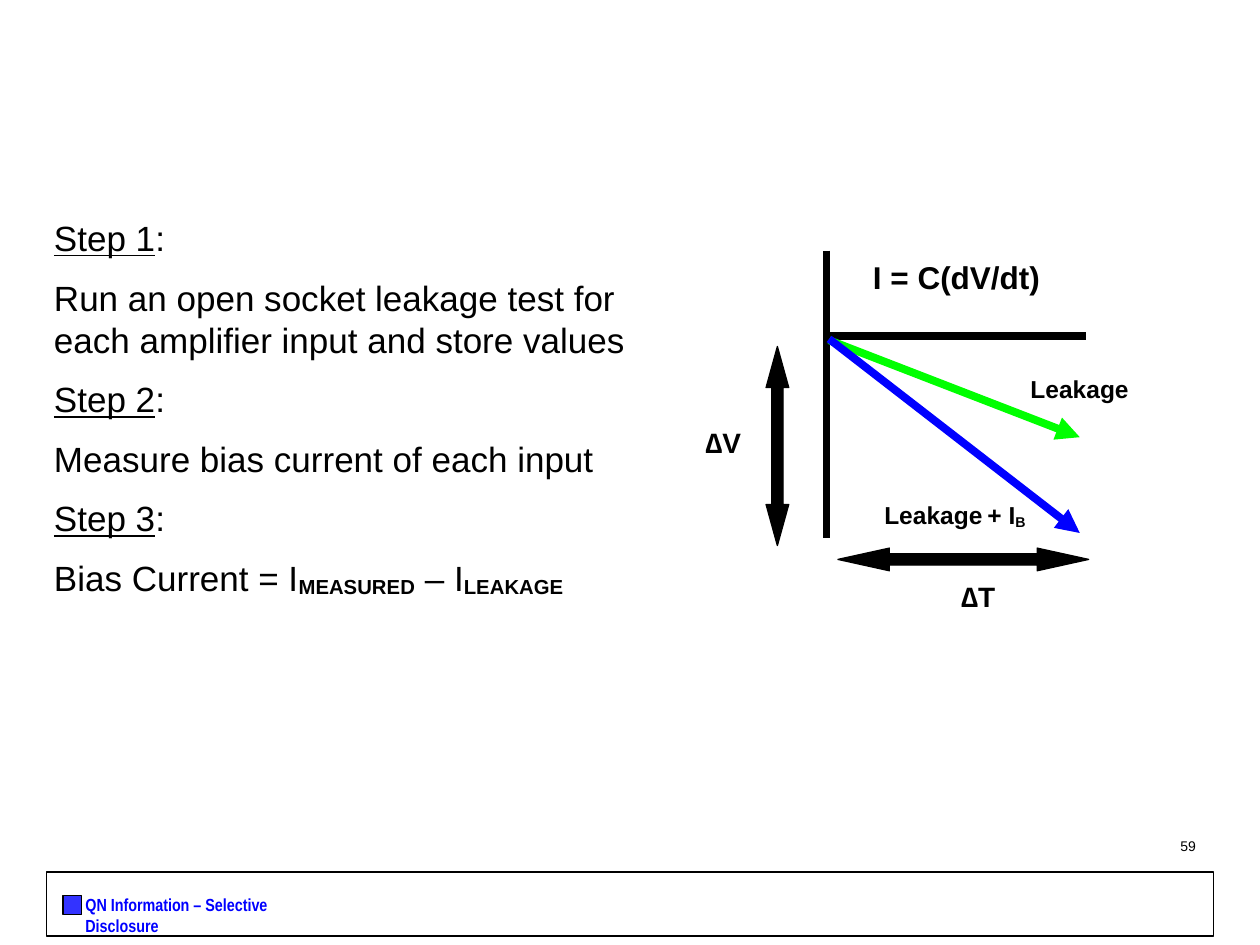
"""Build the bias current measurement slide."""
from pptx import Presentation
from pptx.dml.color import RGBColor
from pptx.enum.shapes import MSO_CONNECTOR as CONN, MSO_SHAPE as SHAPE
from pptx.enum.text import PP_ALIGN as ALIGN
from pptx.oxml.ns import qn
from pptx.util import Inches, Pt
from lxml.etree import SubElement

BLACK = RGBColor(0, 0, 0)
GREEN = RGBColor(0, 255, 0)
BLUE = RGBColor(0, 0, 255)
SQUARE_BLUE = RGBColor(0x33, 0x33, 0xFF)

UNDER = {"underline": True}
SUB = {"bold": True, "sub": True}
SMALL = {"size": 10}

STEPS = [
    [("Step 1", UNDER), ":"],
    ["Run an open socket leakage test for each amplifier input and store values"],
    [("Step 2", UNDER), ":"],
    ["Measure bias current of each input"],
    [("Step 3", UNDER), ":"],
    ["Bias Current = I", ("MEASURED", SUB), " – I", ("LEAKAGE", SUB)],
]
LABELS = [
    ((6.83, 2, 1.61, 0.85), 18, ["I = C(dV/dt)"]),
    ((5.5, 3.33, 0.49, 0.37), 16, ["∆V"]),
    ((7.53, 4.55, 0.49, 0.37), 16, ["∆T"]),
    ((8.08, 2.92, 0.98, 0.33), 14, ["Leakage"]),
    ((6.92, 3.92, 1.67, 0.33), 14,
     ["Leakage", (" ", SMALL), "+ I", ("B", SUB)]),
]
LINES = [
    ((6.56, 1.99, 6.56, 4.27), BLACK, False),
    ((6.56, 2.67, 8.62, 2.67), BLACK, False),
    ((6.58, 2.7, 8.57, 3.47), GREEN, True),
    ((6.58, 2.69, 8.57, 4.23), BLUE, True),
]
SHAPES = [
    (SHAPE.RECTANGLE, (0.37, 6.92, 9.26, 0.51), None, ()),
    (SHAPE.RECTANGLE, (0.5, 7.11, 0.15, 0.15), SQUARE_BLUE, ()),
    (SHAPE.UP_DOWN_ARROW, (6.08, 2.75, 0.18, 1.58), BLACK, (0.5, 1.81)),
    (SHAPE.LEFT_RIGHT_ARROW, (6.65, 4.35, 1.99, 0.18), BLACK, (0.5, 2.27)),
]


def add_text(slide, box, paragraphs, size=20, bold=False, color=BLACK,
             font="Arial", align=ALIGN.LEFT, space=10):
    tf = slide.shapes.add_textbox(*map(Inches, box)).text_frame
    tf.word_wrap = True
    for i, runs in enumerate(paragraphs):
        p = tf.paragraphs[0] if i == 0 else tf.add_paragraph()
        p.alignment = align
        if i:
            p.space_before = Pt(space)
        for item in runs:
            text, style = (item, {}) if isinstance(item, str) else item
            r = p.add_run()
            r.text = text
            r.font.name = font
            r.font.size = Pt(style.get("size", size))
            r.font.bold = style.get("bold", bold)
            r.font.underline = style.get("underline", False)
            r.font.color.rgb = color
            if style.get("sub"):
                r.font._element.set("baseline", "-10000")


def add_line(slide, ends, color, arrow):
    line = slide.shapes.add_connector(CONN.STRAIGHT, *map(Inches, ends))
    line.line.width = Pt(4.5)
    line.line.color.rgb = color
    if arrow:
        SubElement(line.line._get_or_add_ln(), qn("a:tailEnd"), type="triangle")
    SubElement(line._element.spPr, qn("a:effectLst"))


def set_adjustments(sp, values):
    guides = sp._element.spPr.find(qn("a:prstGeom")).get_or_add_avLst()
    for guide in list(guides):
        guides.remove(guide)
    for n, value in enumerate(values, 1):
        SubElement(guides, qn("a:gd"), name=f"adj{n}",
                   fmla=f"val {round(value * 100000)}")


def add_shape(slide, kind, box, fill, adjustments):
    sp = slide.shapes.add_shape(kind, *map(Inches, box))
    sp.shadow.inherit = False
    set_adjustments(sp, adjustments)
    if fill is None:
        sp.fill.background()
    else:
        sp.fill.solid()
        sp.fill.fore_color.rgb = fill
    sp.line.color.rgb = BLACK
    sp.line.width = Pt(0.75)


def main():
    prs = Presentation()
    prs.slide_width, prs.slide_height = Inches(10), Inches(7.5)
    slide = prs.slides.add_slide(prs.slide_layouts[6])
    for shape in SHAPES:
        add_shape(slide, *shape)
    for line in LINES:
        add_line(slide, *line)
    for box, size, runs in LABELS:
        add_text(slide, box, [runs], size=size, bold=True)
    add_text(slide, (0.33, 1.67, 5.08, 3.27), STEPS)
    add_text(slide, (0.58, 7.05, 1.7, 0.27),
             [["QN Information – Selective Disclosure"]],
             size=10, bold=True, color=BLUE, font="Arial Narrow")
    add_text(slide, (7.26, 6.6, 2.33, 0.23), [["59"]], size=8, align=ALIGN.RIGHT)
    prs.save("out.pptx")


if __name__ == "__main__":
    main()
